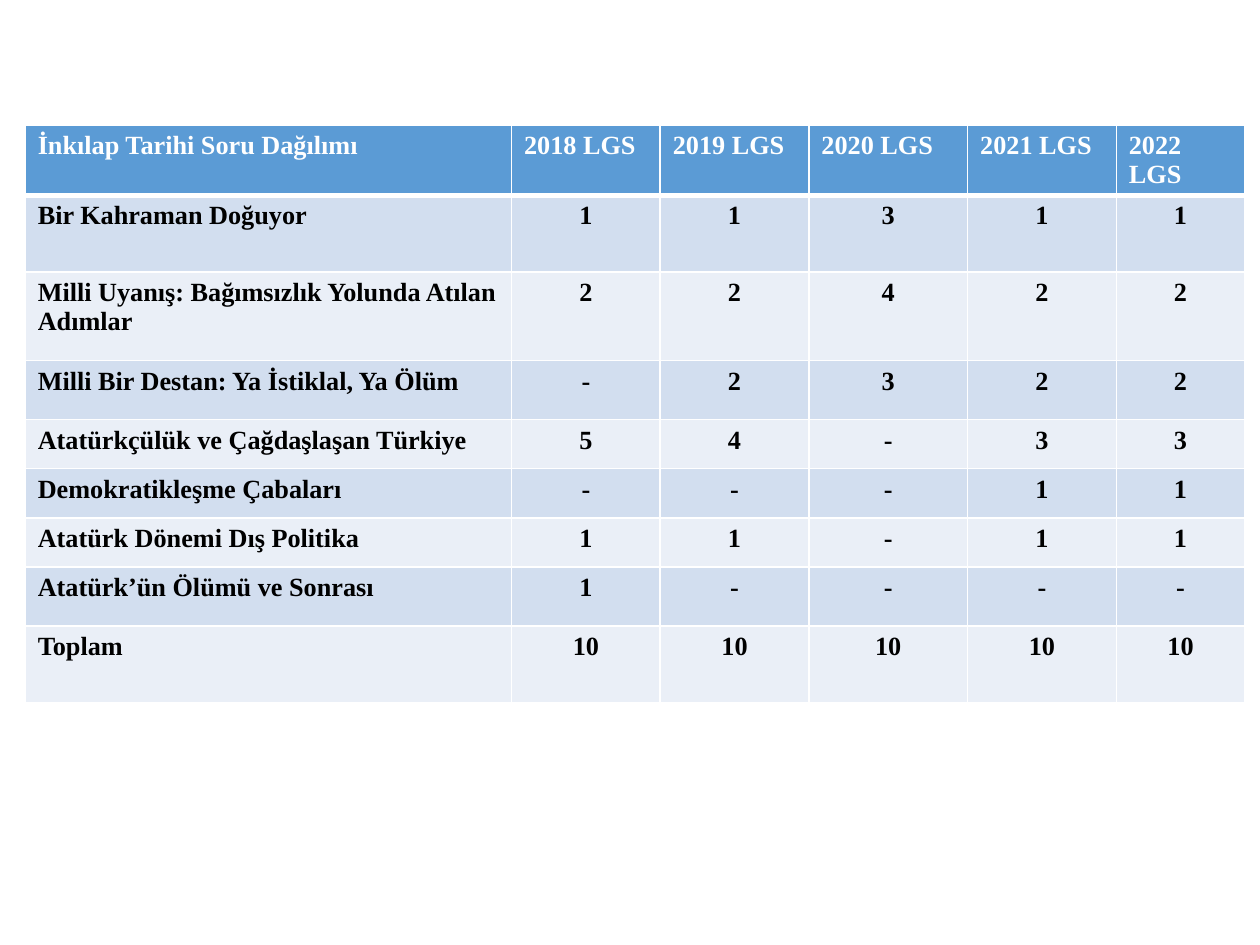
from lxml.etree import SubElement
from pptx import Presentation
from pptx.dml.color import RGBColor
from pptx.enum.text import PP_ALIGN
from pptx.oxml.ns import qn
from pptx.util import Inches, Pt

GRID_COLUMNS, GRID_ROWS = 100, 75
COLUMN_WIDTHS = [38.6, 11.8, 11.8, 12.6, 11.8, 10.2]
ROW_HEIGHTS = [5.5, 6.1, 7, 4.7, 3.9, 3.9, 3.9, 4.7, 6.1]
YEARS = range(2018, 2023)
QUESTION_COUNTS = [
    ("Bir Kahraman Doğuyor", "1 1 3 1 1"),
    ("Milli Uyanış: Bağımsızlık Yolunda Atılan Adımlar", "2 2 4 2 2"),
    ("Milli Bir Destan: Ya İstiklal, Ya Ölüm", "- 2 3 2 2"),
    ("Atatürkçülük ve Çağdaşlaşan Türkiye", "5 4 - 3 3"),
    ("Demokratikleşme Çabaları", "- - - 1 1"),
    ("Atatürk Dönemi Dış Politika", "1 1 - 1 1"),
    ("Atatürk’ün Ölümü ve Sonrası", "1 - - - -"),
    ("Toplam", "10 10 10 10 10"),
]


def color(value):
    return RGBColor.from_string(value)


class SlideWriter:
    header_fill = "5B9BD5"
    band_fills = ["EAEFF7", "D2DEEF"]
    border_color = "FFFFFF"
    font_format = {"name": "Times New Roman", "size": Pt(15), "bold": True}

    def __init__(self, deck):
        self.deck = deck
        self.page = deck.slides.add_slide(deck.slide_layouts[6])

    def across(self, columns):
        return round(self.deck.slide_width * columns / GRID_COLUMNS)

    def down(self, rows):
        return round(self.deck.slide_height * rows / GRID_ROWS)

    def table(self, left, top, widths, heights, records):
        frame = self.page.shapes.add_table(
            len(heights), len(widths), self.across(left), self.down(top),
            self.across(sum(widths)), self.down(sum(heights)))
        table = frame.table
        for column, width in zip(table.columns, widths):
            column.width = self.across(width)
        for row, height in zip(table.rows, heights):
            row.height = self.down(height)
        for row_index, record in enumerate(records):
            for column_index, text in enumerate(record):
                self.cell(table.cell(row_index, column_index), text, row_index, column_index)

    def cell(self, cell, text, row_index, column_index):
        is_header = row_index == 0
        self.borders(cell, 3 if is_header else 1, 3 if row_index == 1 else 1)
        cell.fill.solid()
        cell.fill.fore_color.rgb = color(
            self.header_fill if is_header else self.band_fills[row_index % 2])
        para = cell.text_frame.paragraphs[0]
        if is_header and column_index == 0:
            para.alignment = PP_ALIGN.JUSTIFY
        elif is_header or column_index == 0:
            para.alignment = PP_ALIGN.LEFT
        else:
            para.alignment = PP_ALIGN.CENTER
        span = para.add_run()
        span.text = text
        for name, value in self.font_format.items():
            setattr(span.font, name, value)
        span.font.color.rgb = color("FFFFFF" if is_header else "000000")

    def borders(self, cell, bottom, top):
        properties = cell._tc.get_or_add_tcPr()
        for side, points in zip("LRTB", [1, 1, top, bottom]):
            line = SubElement(properties, qn(f"a:ln{side}"), w=str(Pt(points)))
            fill = SubElement(line, qn("a:solidFill"))
            SubElement(fill, qn("a:srgbClr"), val=self.border_color)


def main():
    deck = Presentation()
    deck.slide_width, deck.slide_height = Inches(10), Inches(7.5)
    writer = SlideWriter(deck)
    header = ["İnkılap Tarihi Soru Dağılımı"] + [f"{year} LGS" for year in YEARS]
    records = [header] + [[topic] + counts.split() for topic, counts in QUESTION_COUNTS]
    writer.table(2, 9.9, COLUMN_WIDTHS, ROW_HEIGHTS, records)
    deck.save("out.pptx")


if __name__ == "__main__":
    main()
